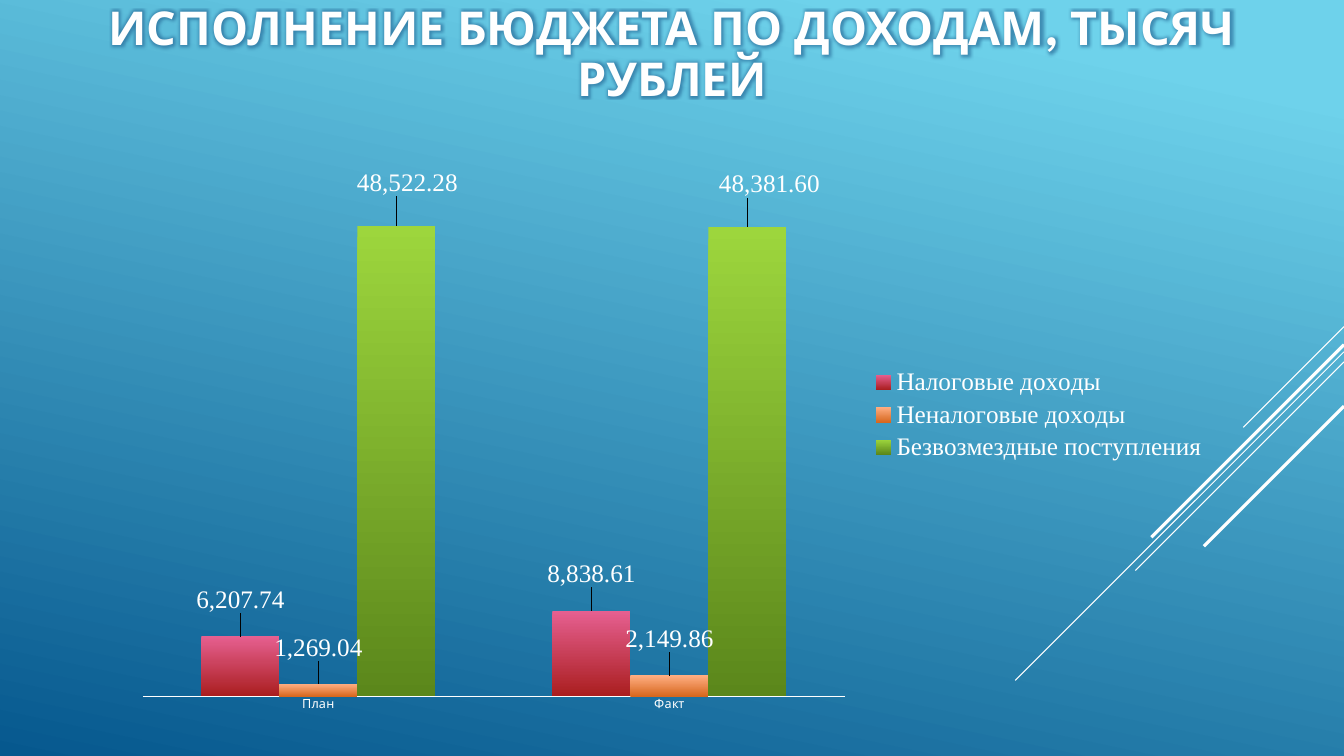
from lxml.etree import SubElement
from pptx import Presentation
from pptx.chart.data import CategoryChartData
from pptx.dml.color import RGBColor
from pptx.enum.chart import (XL_CHART_TYPE, XL_LABEL_POSITION,
                             XL_LEGEND_POSITION, XL_TICK_MARK)
from pptx.enum.shapes import MSO_CONNECTOR
from pptx.enum.text import MSO_ANCHOR, MSO_AUTO_SIZE, PP_ALIGN
from pptx.oxml import parse_xml
from pptx.oxml.ns import nsdecls, qn
from pptx.util import Inches, Pt

TITLE = "ИСПОЛНЕНИЕ БЮДЖЕТА ПО ДОХОДАМ, ТЫСЯЧ РУБЛЕЙ"
HEAD, BODY = "League Spartan", "Times New Roman"
WHITE, GLOW = "FFFFFF", "1F5F8F"
BACK = [(0.1, "6ED2EB"), (1, "06588E")]
NUMBER = "#,##0.00"

CATS = ["План", "Факт"]
# name, values, gradient, label shift (x, y) per point as part of the chart
SERIES = [
    ("Налоговые доходы", (6207.74, 8838.61), ("E66091", "AA1E1F"),
     [(0, -0.03), (0, -0.03)]),
    ("Неналоговые доходы", (1269.04, 2149.86), ("FFAE82", "D7681F"),
     [(0, -0.03), (0, -0.03)]),
    ("Безвозмездные поступления", (48522.28, 48381.6), ("9DD63D", "5B871B"),
     [(0.01, -0.04), (0.02, -0.04)]),
]

# 45-degree rays from the right edge: start height, run, width in points
RIGHT = 13.33
RAYS = [(3.24, 1, 0.75), (3.49, 3.26, 0.75), (3.59, 2.07, 0.75),
        (3.42, 1.91, 2.25), (4.03, 1.39, 2.25)]


def rgb(code):
    return RGBColor.from_string(code)


def shade(fill, stops, angle):
    """Fill with a two-stop gradient; the angle runs clockwise."""
    fill.gradient()
    fill.gradient_angle = 360 - angle
    for stop, (pos, code) in zip(fill.gradient_stops, stops):
        stop.position = pos
        stop.color.rgb = rgb(code)


def style(font, size, name, color=WHITE, bold=False):
    font.size, font.name, font.bold = Pt(size), name, bold
    font.color.rgb = rgb(color)


def put(frame, text, align=PP_ALIGN.CENTER, spacing=0.9, **fmt):
    para = frame.paragraphs[0]
    para.alignment, para.line_spacing = align, spacing
    run = para.add_run()
    run.text = text
    style(run.font, **fmt)
    return run


def glow(run, color, radius):
    effect = parse_xml(
        f'<a:effectLst {nsdecls("a")}><a:glow rad="{Pt(radius)}">'
        f'<a:srgbClr val="{color}"><a:alpha val="60000"/></a:srgbClr>'
        '</a:glow></a:effectLst>')
    run.font.fill._xPr.find(qn("a:solidFill")).addnext(effect)


def layout(**parts):
    """Make a manual chart layout from its named parts."""
    inner = "".join(f'<c:{k} val="{v}"/>' for k, v in parts.items())
    return parse_xml(f'<c:layout {nsdecls("c")}><c:manualLayout>{inner}'
                     '</c:manualLayout></c:layout>')


def ray(slide, top, run, width):
    line = slide.shapes.add_connector(
        MSO_CONNECTOR.STRAIGHT, Inches(RIGHT), Inches(top),
        Inches(RIGHT - run), Inches(top + run))
    line.line.color.rgb = rgb(WHITE)
    line.line.width = Pt(width)
    SubElement(line._element.spPr, qn("a:effectLst"))


def label(series, shifts):
    """Show values above the bars, each moved by its own shift."""
    for i, (x, y) in enumerate(shifts):
        mark = series.points[i].data_label
        style(mark.font, 18, BODY)
        mark.position = XL_LABEL_POSITION.OUTSIDE_END
        node = series._element.xpath(f"c:dLbls/c:dLbl[c:idx/@val={i}]")[0]
        place = layout(x=x, y=y)
        node.find(qn("c:idx")).addnext(place)
        place.addnext(parse_xml(
            f'<c:numFmt {nsdecls("c")} formatCode="{NUMBER}" sourceLinked="0"/>'))
    labels = series.data_labels
    labels.show_value = True
    labels.number_format, labels.number_format_is_linked = NUMBER, False
    style(labels.font, 18, BODY)


def draw(slide):
    data = CategoryChartData(number_format=NUMBER)
    data.categories = CATS
    for name, vals, _, _ in SERIES:
        data.add_series(name, vals)
    chart = slide.shapes.add_chart(
        XL_CHART_TYPE.COLUMN_CLUSTERED, Inches(1.2), Inches(1.01),
        Inches(10.88), Inches(6.21), data).chart
    chart.has_title = False
    style(chart.font, 10, HEAD)

    chart.has_legend = True
    chart.legend.position = XL_LEGEND_POSITION.RIGHT
    chart.legend.include_in_layout = False
    style(chart.legend.font, 18, BODY)

    cat, val = chart.category_axis, chart.value_axis
    cat.major_tick_mark = cat.minor_tick_mark = XL_TICK_MARK.NONE
    cat.format.line.color.rgb = rgb(WHITE)
    cat.format.line.width = Pt(1)
    style(cat.tick_labels.font, 9, HEAD)
    val.minimum_scale, val.maximum_scale = 0, 60000
    val.has_major_gridlines = False
    val.tick_labels.number_format = NUMBER
    val.tick_labels.number_format_is_linked = False
    val.visible = False

    plot = chart.plots[0]
    plot.gap_width, plot.overlap, plot.vary_by_categories = 150, 0, False
    for series, (_, _, colors, shifts) in zip(plot.series, SERIES):
        shade(series.format.fill, list(zip((0, 1), colors)), 90)
        label(series, shifts)

    area = chart._chartSpace.chart.plotArea
    for old in area.findall(qn("c:layout")):
        area.remove(old)
    area.insert(0, layout(layoutTarget="inner", xMode="edge", yMode="edge",
                          x=0.02, y=0.02, w=0.64, h=0.93))


def main():
    deck = Presentation()
    deck.slide_width, deck.slide_height = Inches(RIGHT), Inches(7.5)
    slide = deck.slides.add_slide(deck.slide_layouts[5])
    shade(slide.background.fill, BACK, 102)

    title = slide.shapes.title
    title.left, title.top = Inches(0), Inches(0.1)
    title.width, title.height = Inches(RIGHT), Inches(0.91)
    frame = title.text_frame
    frame.word_wrap, frame.auto_size = True, MSO_AUTO_SIZE.NONE
    frame.vertical_anchor = MSO_ANCHOR.MIDDLE
    glow(put(frame, TITLE, size=33.3, name=HEAD, bold=True), GLOW, 5)

    for spot in RAYS:
        ray(slide, *spot)
    draw(slide)
    deck.save("out.pptx")


if __name__ == "__main__":
    main()
